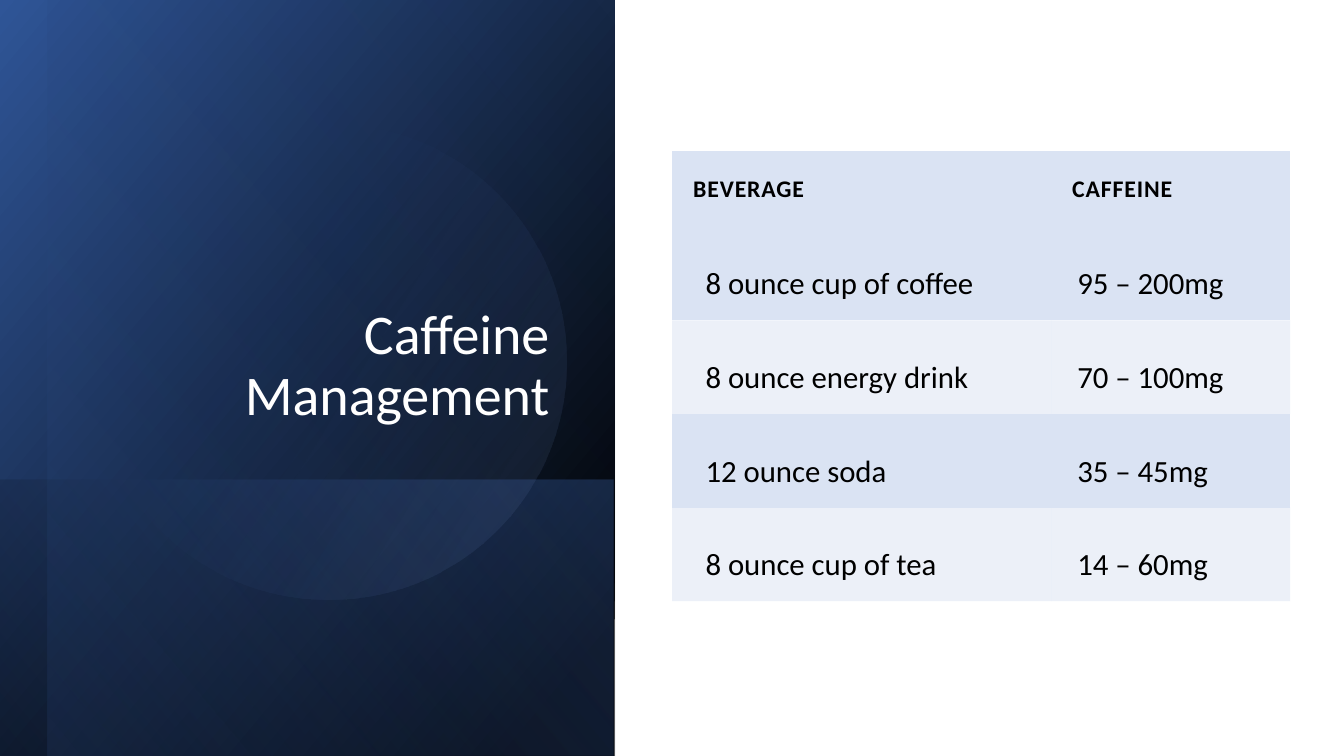
from lxml.etree import SubElement
from pptx import Presentation
from pptx.dml.color import RGBColor
from pptx.enum.shapes import MSO_SHAPE
from pptx.enum.text import MSO_ANCHOR, PP_ALIGN
from pptx.oxml.ns import qn
from pptx.util import Cm, Pt

BLACK = RGBColor(0x00, 0x00, 0x00)
WHITE = RGBColor(0xFF, 0xFF, 0xFF)
BLUE = RGBColor(0x44, 0x72, 0xC4)
DARK_BLUE = RGBColor(0x2F, 0x55, 0x97)
LIGHT_BLUE = RGBColor(0x8F, 0xAA, 0xDC)
PALE_BLUE = RGBColor(0xDA, 0xE3, 0xF3)

FONT = "Calibri"
PLAIN_TABLE_STYLE = "{2D5ABB26-0587-4C30-8999-92F81FD0307C}"
BEVERAGES = [
    ("BEVERAGE", "CAFFEINE"),
    ("8 ounce cup of coffee", "95 – 200mg"),
    ("8 ounce energy drink", "70 – 100mg"),
    ("12 ounce soda", "35 – 45mg"),
    ("8 ounce cup of tea", "14 – 60mg"),
]


def write_text(text_frame, text, size, color, bold=False, spacing=0,
               align=PP_ALIGN.LEFT, line_spacing=1.0):
    paragraph = text_frame.paragraphs[0]
    paragraph.alignment = align
    paragraph.line_spacing = line_spacing
    run = paragraph.add_run()
    run.text = text
    run.font.name = FONT
    run.font.size = Pt(size)
    run.font.bold = bold
    run.font.color.rgb = color
    if spacing:
        run.font._element.set("spc", str(round(spacing * 100)))


def set_margins(target, left, top, right, bottom):
    target.margin_left, target.margin_top = Cm(left), Cm(top)
    target.margin_right, target.margin_bottom = Cm(right), Cm(bottom)


def set_alpha(color_element, percent):
    SubElement(color_element, qn("a:alpha")).set("val", str(percent * 1000))


def fill_gradient(shape, stops, angle):
    """Fill with (position, color, opacity) stops, all but color in percent."""
    shape.fill.background()
    no_fill = shape._element.spPr.find(qn("a:noFill"))
    gradient = SubElement(shape._element.spPr, qn("a:gradFill"))
    gradient.set("rotWithShape", "1")
    stop_list = SubElement(gradient, qn("a:gsLst"))
    for position, color, opacity in stops:
        stop = SubElement(stop_list, qn("a:gs"))
        stop.set("pos", str(position * 1000))
        color_element = SubElement(stop, qn("a:srgbClr"))
        color_element.set("val", str(color))
        if opacity < 100:
            set_alpha(color_element, opacity)
    SubElement(gradient, qn("a:lin")).set("ang", str(angle * 60000))
    shape._element.spPr.replace(no_fill, gradient)


def add_gradient_shape(slide, kind, left, top, width, height, stops, angle,
                       rotation=90, flip=True):
    shape = slide.shapes.add_shape(
        kind, Cm(left), Cm(top), Cm(width), Cm(height))
    shape.shadow.inherit = False
    shape.line.fill.background()
    shape.rotation = rotation
    if flip:
        shape._element.spPr.find(qn("a:xfrm")).set("flipH", "1")
    fill_gradient(shape, stops, angle)


def add_panel(slide):
    rectangle = MSO_SHAPE.RECTANGLE
    add_gradient_shape(slide, rectangle, -1.78, 1.78, 19.05, 15.49,
                       [(8, BLACK, 100), (100, DARK_BLUE, 100)], 50)
    add_gradient_shape(slide, rectangle, 4.24, 7.82, 6.96, 15.49,
                       [(2, BLUE, 29), (100, BLACK, 30)], 130)
    add_gradient_shape(slide, rectangle, -1.17, 2.36, 19.05, 14.3,
                       [(0, BLACK, 0), (99, BLUE, 11)], 130)
    add_gradient_shape(slide, MSO_SHAPE.OVAL, 2.29, 3.12, 11.99, 11.99,
                       [(39, BLUE, 0), (100, LIGHT_BLUE, 15)], 290,
                       rotation=101.6, flip=False)


def place_title(slide, text):
    title = slide.shapes.title
    title.left, title.top = Cm(1.83), Cm(2.49)
    title.width, title.height = Cm(12.27), Cm(8.41)
    title.text_frame.word_wrap = True
    title.text_frame.vertical_anchor = MSO_ANCHOR.BOTTOM
    write_text(title.text_frame, text, 40, WHITE,
               align=PP_ALIGN.RIGHT, line_spacing=0.9)
    # Bring the title in front of the panel
    slide.shapes._spTree.append(title._element)


def add_caffeine_table(slide):
    table = slide.shapes.add_table(len(BEVERAGES), 2, Cm(16.94), Cm(3.81),
                                   Cm(15.57), Cm(11.34)).table
    table.first_row = table.horz_banding = False
    table._tbl.tblPr.find(qn("a:tableStyleId")).text = PLAIN_TABLE_STYLE
    for column, width in zip(table.columns, (9.55, 6.02)):
        column.width = Cm(width)
    for row_index, row_texts in enumerate(BEVERAGES):
        is_header = row_index == 0
        table.rows[row_index].height = Cm(1.9 if is_header else 2.36)
        for column_index, text in enumerate(row_texts):
            cell = table.cell(row_index, column_index)
            cell.vertical_anchor = MSO_ANCHOR.MIDDLE
            cell.fill.solid()
            cell.fill.fore_color.rgb = PALE_BLUE
            if row_index and row_index % 2 == 0:
                set_alpha(next(cell._tc.tcPr.iter(qn("a:srgbClr"))), 50)
            if is_header:
                set_margins(cell, 0.53, 0.53, 0.53, 0.53)
                write_text(cell.text_frame, text, 17, BLACK,
                           bold=True, spacing=0.6)
            else:
                left = 0.66 if column_index else 0.84
                set_margins(cell, left, 0.91, 0.74, 0.36)
                write_text(cell.text_frame, text, 22, BLACK)


def main():
    presentation = Presentation()
    presentation.slide_width = Cm(33.87)
    presentation.slide_height = Cm(19.05)
    title_only = presentation.slide_layouts[5]
    slide = presentation.slides.add_slide(title_only)

    # Dark panel with the title
    add_panel(slide)
    place_title(slide, "Caffeine Management")

    # Caffeine per beverage
    add_caffeine_table(slide)
    presentation.save("out.pptx")


if __name__ == "__main__":
    main()
